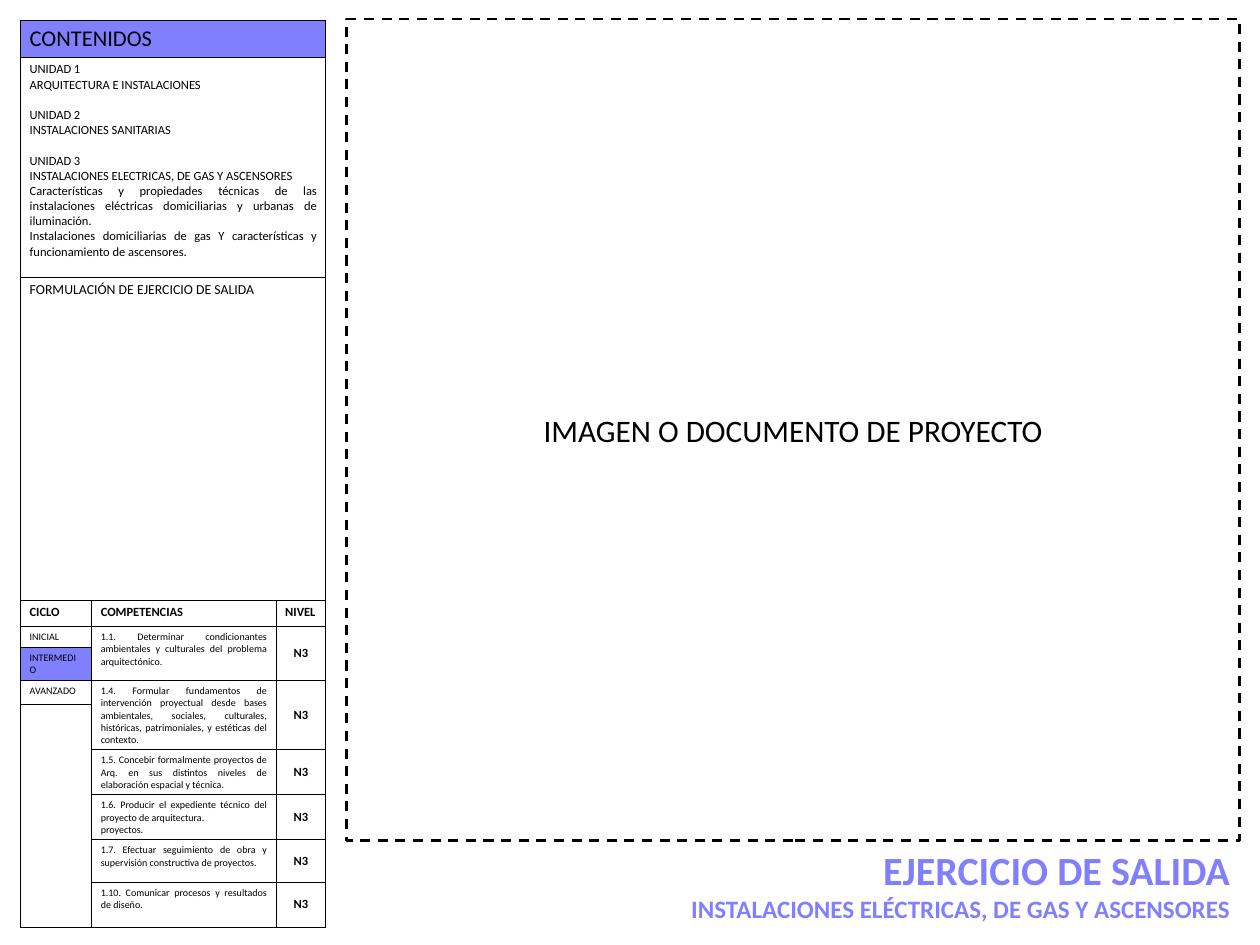
from lxml import etree
from pptx import Presentation
from pptx import util as u
from pptx.dml.color import RGBColor
from pptx.enum import dml, shapes, text
from pptx.oxml import ns

BLACK = RGBColor(0, 0, 0)
VIOLET = RGBColor(0x80, 0x80, 0xFF)
LEFT = text.PP_ALIGN.JUSTIFY
MID = text.PP_ALIGN.CENTER
RIGHT = text.PP_ALIGN.RIGHT

COLS = [0.79, 2.05, 0.55]
ROWS = [0.41, 2.44, 3.59, 0.29, 0.23, 0.37, 0.26, 0.51, 0.5, 0.5, 0.47, 0.5]
THIN = {5, 6, 7, 12}

UNITS = [
    ["UNIDAD 1", "ARQUITECTURA E INSTALACIONES"],
    ["UNIDAD 2", "INSTALACIONES SANITARIAS"],
    ["UNIDAD 3", "INSTALACIONES ELECTRICAS, DE GAS Y ASCENSORES",
     "Características y propiedades técnicas de las instalaciones eléctricas "
     "domiciliarias y urbanas de iluminación.",
     "Instalaciones domiciliarias de gas Y características y funcionamiento "
     "de ascensores."],
]
SKILLS = [
    (4, 5, ["1.1. Determinar condicionantes ambientales y culturales del "
            "problema arquitectónico."]),
    (6, 7, ["1.4. Formular fundamentos de intervención proyectual desde bases "
            "ambientales, sociales, culturales, históricas, patrimoniales, y "
            "estéticas del contexto."]),
    (8, 8, ["1.5. Concebir formalmente proyectos de Arq. en sus distintos "
            "niveles de elaboración espacial y técnica."]),
    (9, 9, ["1.6. Producir el expediente técnico del proyecto de arquitectura.",
            "proyectos."]),
    (10, 10, ["1.7. Efectuar seguimiento de obra y supervisión constructiva de "
              "proyectos."]),
    (11, 11, ["1.10. Comunicar procesos y resultados de diseño."]),
]


def write(frame, line, size=10, bold=False, color=BLACK, align=LEFT, gap=0):
    par = frame.paragraphs[0]
    if par.runs:
        par = frame.add_paragraph()
    par.alignment = align
    par.space_before = u.Pt(gap)
    run = par.add_run()
    run.text = line
    font = run.font
    font.name, font.size, font.bold = "Calibri", u.Pt(size), bold
    font.color.rgb = color


def border(cell, sides):
    props = cell._tc.get_or_add_tcPr()
    for spot, (side, width) in enumerate(sides.items()):
        line = etree.Element(ns.qn("a:ln" + side), w=str(u.Pt(width)))
        fill = etree.SubElement(line, ns.qn("a:solidFill"))
        etree.SubElement(fill, ns.qn("a:srgbClr"), val=str(BLACK))
        props.insert(spot, line)


class Sheet:
    def __init__(self, deck):
        self.slide = deck.slides.add_slide(deck.slide_layouts[5])

    def title(self, box, lines):
        head = self.slide.shapes.title
        head.left, head.top, head.width, head.height = map(u.Inches, box)
        frame = head.text_frame
        frame.word_wrap = True
        frame.auto_size = text.MSO_AUTO_SIZE.SHAPE_TO_FIT_TEXT
        frame.vertical_anchor = text.MSO_ANCHOR.TOP
        for line, size in lines:
            write(frame, line, size=size, bold=True, color=VIOLET, align=RIGHT)

    def frame(self, box, label):
        area = self.slide.shapes.add_shape(
            shapes.MSO_SHAPE.RECTANGLE, *map(u.Inches, box))
        area.shadow.inherit = False
        area.fill.background()
        area.line.color.rgb = BLACK
        area.line.width = u.Pt(2)
        area.line.dash_style = dml.MSO_LINE.DASH
        area.text_frame.vertical_anchor = text.MSO_ANCHOR.MIDDLE
        write(area.text_frame, label, size=25, align=MID)

    def grid(self, left, top):
        table = self.slide.shapes.add_table(
            len(ROWS), len(COLS), u.Inches(left), u.Inches(top),
            u.Inches(sum(COLS)), u.Inches(sum(ROWS))).table
        table.first_row = table.horz_banding = False
        for col, width in zip(table.columns, COLS):
            col.width = u.Inches(width)
        for row, height in zip(table.rows, ROWS):
            row.height = u.Inches(height)
        for r in range(len(ROWS)):
            for c in range(len(COLS)):
                cell = table.cell(r, c)
                if r == 0 or (r, c) == (5, 0):
                    cell.fill.solid()
                    cell.fill.fore_color.rgb = VIOLET
                else:
                    cell.fill.background()
                top, base = (0.5 if edge == 2 or c == 0 and edge in THIN else 1
                             for edge in (r, r + 1))
                border(cell, {"L": 1, "R": 1, "T": top, "B": base})
        return table


def main():
    deck = Presentation()
    deck.slide_width, deck.slide_height = u.Inches(14), u.Inches(10.5)
    sheet = Sheet(deck)

    table = sheet.grid(0.23, 0.23)
    for r in range(3):
        table.cell(r, 0).merge(table.cell(r, 2))
    table.cell(7, 0).merge(table.cell(11, 0))

    write(table.cell(0, 0).text_frame, "CONTENIDOS", size=18)
    for n, unit in enumerate(UNITS):
        for k, line in enumerate(unit):
            write(table.cell(1, 0).text_frame, line,
                  gap=12.2 if n and k == 0 else 0)
    write(table.cell(2, 0).text_frame, "FORMULACIÓN DE EJERCICIO DE SALIDA",
          size=11)
    for c, label in enumerate(["CICLO", "COMPETENCIAS", "NIVEL"]):
        write(table.cell(3, c).text_frame, label, bold=True)
    for r, label in enumerate(["INICIAL", "INTERMEDIO", "AVANZADO"], 4):
        write(table.cell(r, 0).text_frame, label, size=8)

    for first, last, lines in SKILLS:
        skill, level = table.cell(first, 1), table.cell(first, 2)
        if last > first:
            skill.merge(table.cell(last, 1))
            level.merge(table.cell(last, 2))
        for line in lines:
            write(skill.text_frame, line, size=8)
        level.vertical_anchor = text.MSO_ANCHOR.MIDDLE
        write(level.text_frame, "N3", bold=True, align=MID)

    sheet.title((7.31, 9.34, 6.46, 0.98), [
        ("EJERCICIO DE SALIDA", 32),
        ("INSTALACIONES ELÉCTRICAS, DE GAS Y ASCENSORES", 20)])
    sheet.frame((3.85, 0.21, 9.92, 9.13), "IMAGEN O DOCUMENTO DE PROYECTO")
    deck.save("out.pptx")


if __name__ == "__main__":
    main()
